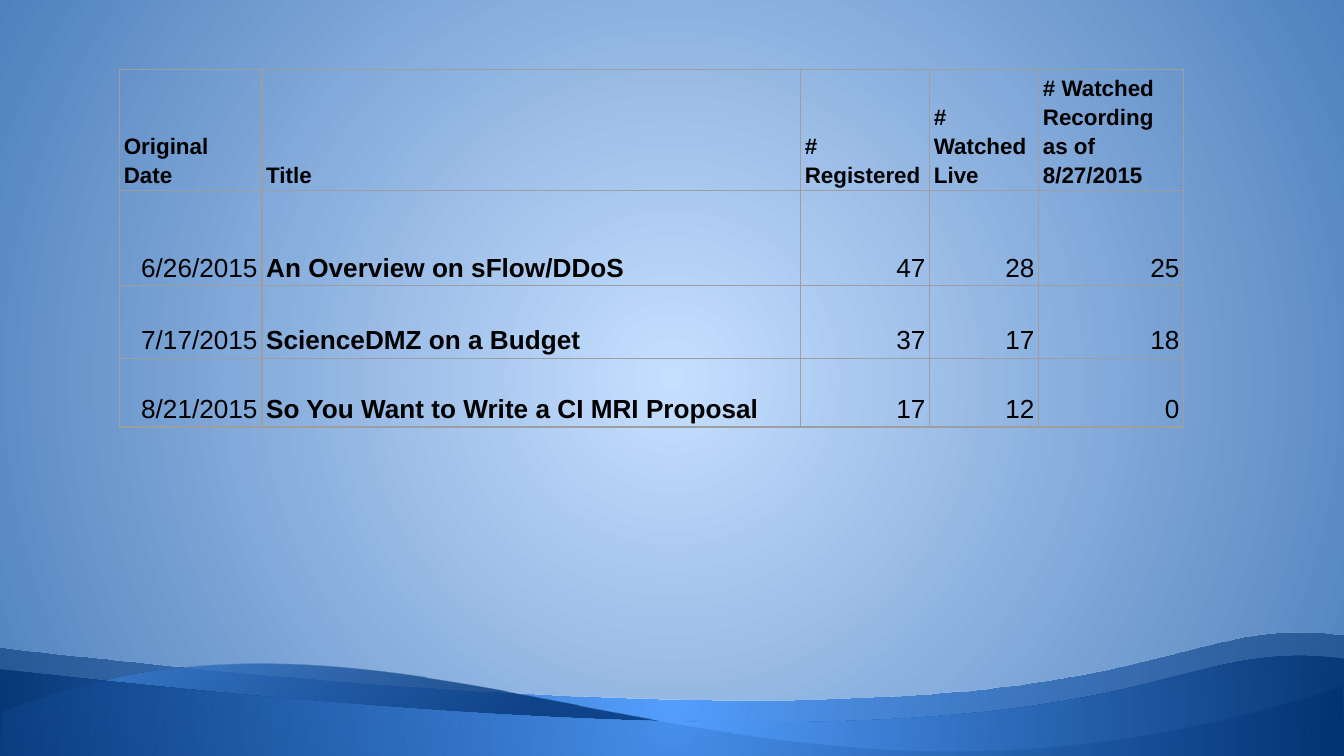
from dataclasses import dataclass

from pptx import Presentation
from pptx.dml.color import RGBColor as Rgb
from pptx.enum.text import MSO_ANCHOR as Anchor, PP_ALIGN as Align
from pptx.oxml import parse_xml as to_xml
from pptx.oxml.ns import nsdecls
from pptx.util import Cm, Pt

NS = nsdecls("a")


@dataclass
class Theme:
    font: str = "Arial"
    head: int = 12
    body: int = 14
    ink: str = "000000"
    rule: str = "9E9E9E"
    sky: str = "C6DFFF"
    haze: str = "4F81BD"
    light: str = "549FFF"
    deep: str = "003171"


CENTER = (50, 50, 50, 50)
CORNER = (0, 0, 100, 100)

HEADS = ["Original Date", "Title", "# Registered", "# Watched Live",
         "# Watched Recording as of 8/27/2015"]
TALKS = [
    ["6/26/2015", "An Overview on sFlow/DDoS", "47", "28", "25"],
    ["7/17/2015", "ScienceDMZ on a Budget", "37", "17", "18"],
    ["8/21/2015", "So You Want to Write a CI MRI Proposal", "17", "12", "0"],
]
WIDTHS = [2.69, 10.18, 2.44, 2.06, 2.74]
HEIGHTS = [1.42, 1.8, 1.37, 1.3]


class Deck:
    def __init__(self, theme):
        self.theme = theme
        self.prs = Presentation()
        self.prs.slide_width, self.prs.slide_height = Cm(25.4), Cm(14.29)
        self.slide = self.prs.slides.add_slide(self.prs.slide_layouts[6])

    def glow(self, grad, stops, focus):
        """Turn a gradient fill into a radial one; stops are (place, colour, alpha)."""
        for part in list(grad):
            grad.remove(part)
        marks = "".join(
            f'<a:gs pos="{at * 1000}"><a:srgbClr val="{color}">'
            f'<a:alpha val="{alpha * 1000}"/></a:srgbClr></a:gs>'
            for at, color, alpha in stops)
        grad.append(to_xml(f"<a:gsLst {NS}>{marks}</a:gsLst>"))
        sides = " ".join(f'{side}="{val * 1000}"' for side, val in zip("ltrb", focus))
        grad.append(to_xml(f'<a:path {NS} path="circle"><a:fillToRect {sides}/></a:path>'))

    def back(self, stops):
        self.slide.background.fill.gradient()
        self.glow(self.slide.element.xpath(".//p:bg//a:gradFill")[0], stops, CENTER)

    def wave(self, points, stops, focus=CENTER):
        """A start, two handles and an end for the crest, then straight corners."""
        start, *rest = [(Cm(x), Cm(y)) for x, y in points]
        pen = self.slide.shapes.build_freeform(*start)
        pen.add_line_segments(rest, close=True)
        shape = pen.convert_to_shape()
        shape.shadow.inherit = False
        shape.line.fill.background()
        shape.fill.gradient()
        self.glow(shape.element.xpath(".//a:gradFill")[0], stops, focus)
        # Join the first three lines into one curve
        lines = shape.element.xpath(".//a:lnTo")[:3]
        curve = to_xml(f"<a:cubicBezTo {NS}/>")
        lines[0].addprevious(curve)
        for line in lines:
            curve.append(line[0])
            line.getparent().remove(line)

    def table(self, left, top, rows):
        grid = self.slide.shapes.add_table(
            len(rows), len(WIDTHS), Cm(left), Cm(top),
            Cm(sum(WIDTHS)), Cm(sum(HEIGHTS))).table
        grid.first_row = grid.horz_banding = False
        for col, width in zip(grid.columns, WIDTHS):
            col.width = Cm(width)
        for row, height in zip(grid.rows, HEIGHTS):
            row.height = Cm(height)
        for r, row in enumerate(rows):
            for c, text in enumerate(row):
                self.cell(grid.cell(r, c), text, r == 0, c == 1)

    def cell(self, cell, text, head, title):
        cell.margin_left = cell.margin_right = Cm(0.08)
        cell.margin_top = cell.margin_bottom = Cm(0.05)
        cell.vertical_anchor = Anchor.BOTTOM
        # Borders come before the fill
        props = cell._tc.get_or_add_tcPr()
        for side in "LRTB":
            props.append(to_xml(
                f'<a:ln{side} {NS} w="{Pt(0.75)}"><a:solidFill>'
                f'<a:srgbClr val="{self.theme.rule}"/></a:solidFill></a:ln{side}>'))
        cell.fill.background()
        # Text
        cell.text_frame.text = text
        para = cell.text_frame.paragraphs[0]
        para.line_spacing = 1.15
        para.alignment = Align.LEFT if head or title else Align.RIGHT
        font = para.runs[0].font
        font.name = self.theme.font
        font.size = Pt(self.theme.head if head else self.theme.body)
        font.bold = head or title
        font.color.rgb = Rgb.from_string(self.theme.ink)


def main():
    theme = Theme()
    deck = Deck(theme)

    # Background
    deck.back([(0, theme.sky, 100), (100, theme.haze, 100)])

    # Waves along the foot, back to front
    deck.wave([(0, 12.24), (22.53, 14.81), (21.16, 11.53), (25.4, 12.01),
               (25.4, 14.35), (0, 14.38)],
              [(0, theme.light, 100), (100, theme.deep, 52)])
    deck.wave([(0.05, 13.46), (8.2, 10.29), (13.89, 16.74), (25.35, 12.98),
               (25.4, 14.4), (-0.02, 14.38)],
              [(0, theme.light, 79), (41, theme.deep, 79), (100, theme.deep, 79)],
              CORNER)
    deck.wave([(0, 12.65), (22.53, 15.24), (21.16, 11.96), (25.4, 12.45),
               (25.4, 14.38), (0, 14.4)],
              [(0, theme.light, 82), (100, theme.deep, 82)])

    # Attendance table
    deck.table(2.26, 1.32, [HEADS] + TALKS)

    deck.prs.save("out.pptx")


if __name__ == "__main__":
    main()
